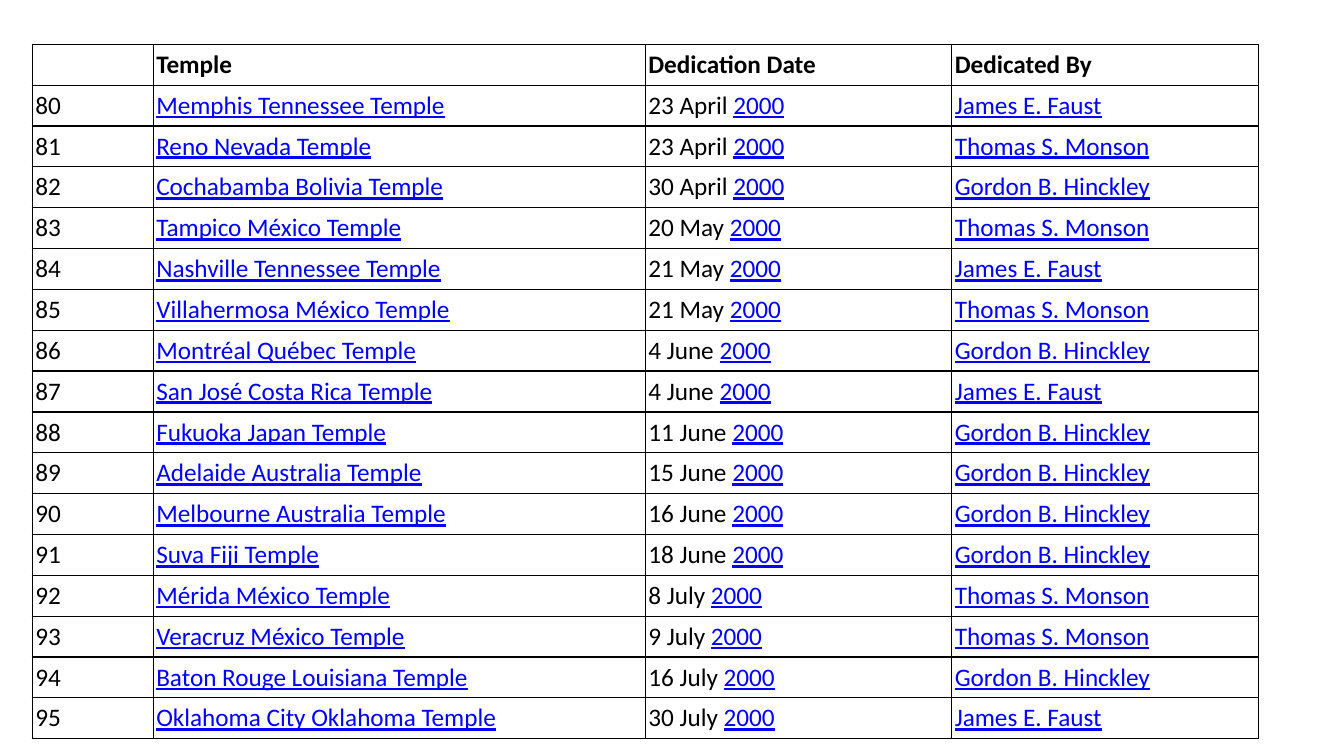
from dataclasses import dataclass

from lxml import etree
from pptx import Presentation
from pptx.dml.color import RGBColor
from pptx.enum.text import MSO_ANCHOR
from pptx.oxml.ns import qn
from pptx.util import Inches, Pt

MIDDLE = MSO_ANCHOR.MIDDLE
BLANK = 6
WIDE, HIGH = 13.33, 7.5


@dataclass(frozen=True)
class Theme:
    font: str = "Calibri"
    size: int = 18
    ink: str = "000000"
    link: str = "0000FF"
    rule: int = 1
    inset: float = 0.03


THEME = Theme()

LEFT, TOP, END = 0.32, 0.44, 7.33
COLS = (1.2, 4.88, 3.04, 3.04)
HEADS = ("", "Temple", "Dedication Date", "Dedicated By")
FIRST, YEAR, SPLIT = 80, "2000", 8

FAUST, MONSON, HINCKLEY = "James E. Faust", "Thomas S. Monson", "Gordon B. Hinckley"
TEMPLES = [
    ("Memphis Tennessee", "23 April", FAUST),
    ("Reno Nevada", "23 April", MONSON),
    ("Cochabamba Bolivia", "30 April", HINCKLEY),
    ("Tampico México", "20 May", MONSON),
    ("Nashville Tennessee", "21 May", FAUST),
    ("Villahermosa México", "21 May", MONSON),
    ("Montréal Québec", "4 June", HINCKLEY),
    ("San José Costa Rica", "4 June", FAUST),
    ("Fukuoka Japan", "11 June", HINCKLEY),
    ("Adelaide Australia", "15 June", HINCKLEY),
    ("Melbourne Australia", "16 June", HINCKLEY),
    ("Suva Fiji", "18 June", HINCKLEY),
    ("Mérida México", "8 July", MONSON),
    ("Veracruz México", "9 July", MONSON),
    ("Baton Rouge Louisiana", "16 July", HINCKLEY),
    ("Oklahoma City Oklahoma", "30 July", FAUST),
]
ROW = (END - TOP) / (len(TEMPLES) + 1)


def plain(text):
    return text, THEME.ink, False, False


def head(text):
    return text, THEME.ink, True, False


def link(text):
    return text, THEME.link, False, True


def entry(num, place, day, leader):
    return [
        [plain(str(num))],
        [link(f"{place} Temple")],
        [plain(f"{day} "), link(YEAR)],
        [link(leader)],
    ]


def border(cell):
    props = cell._tc.get_or_add_tcPr()
    for side in ("lnL", "lnR", "lnT", "lnB"):
        line = etree.SubElement(props, qn(f"a:{side}"), w=str(Pt(THEME.rule)))
        fill = etree.SubElement(line, qn("a:solidFill"))
        etree.SubElement(fill, qn("a:srgbClr"), val=THEME.ink)


def add_run(para, text, color, bold, under):
    run = para.add_run()
    run.text = text
    font = run.font
    font.name, font.size = THEME.font, Pt(THEME.size)
    font.bold, font.underline = bold, under
    font.color.rgb = RGBColor.from_string(color)


def fill_cell(cell, runs):
    border(cell)
    cell.fill.background()
    cell.vertical_anchor = MIDDLE
    cell.margin_left = cell.margin_right = Inches(THEME.inset)
    cell.margin_top = cell.margin_bottom = Inches(THEME.inset)
    para = cell.text_frame.paragraphs[0]
    for run in runs:
        add_run(para, *run)


def add_grid(slide, rows, start):
    frame = slide.shapes.add_table(
        len(rows), len(COLS), Inches(LEFT), Inches(TOP + start * ROW),
        Inches(sum(COLS)), Inches(len(rows) * ROW))
    table = frame.table
    table.first_row = table.horz_banding = False
    for col, width in zip(table.columns, COLS):
        col.width = Inches(width)
    for line, cells in zip(table.rows, rows):
        line.height = Inches(ROW)
        for cell, runs in zip(line.cells, cells):
            fill_cell(cell, runs)


def main():
    deck = Presentation()
    deck.slide_width, deck.slide_height = Inches(WIDE), Inches(HIGH)
    slide = deck.slides.add_slide(deck.slide_layouts[BLANK])
    rows = [[[head(text)] if text else [] for text in HEADS]]
    rows += [entry(num, *item) for num, item in enumerate(TEMPLES, FIRST)]
    cut = SPLIT + 1
    add_grid(slide, rows[cut:], cut)
    add_grid(slide, rows[:cut], 0)
    deck.save("out.pptx")


if __name__ == "__main__":
    main()
